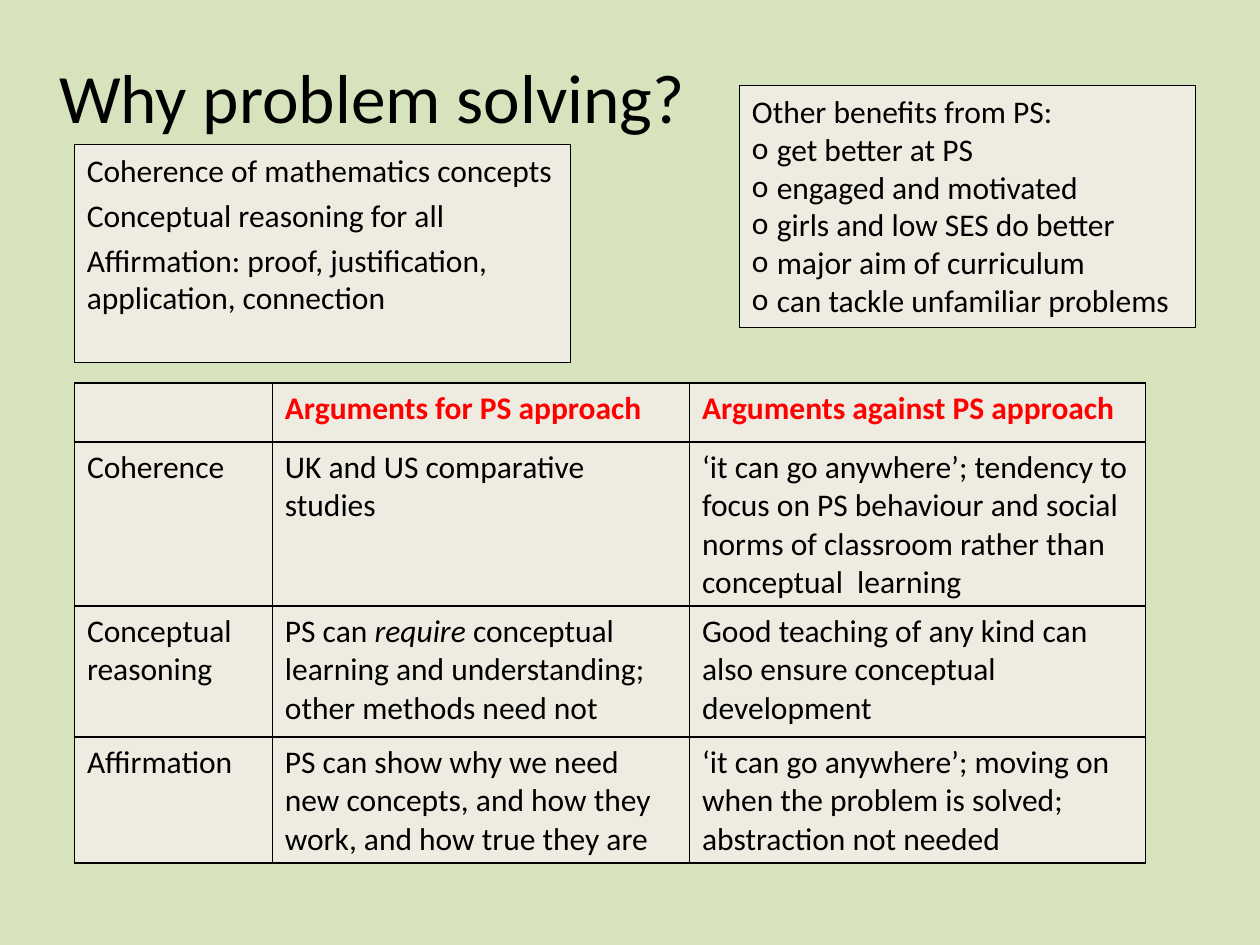
from lxml import etree
from pptx import Presentation
from pptx.dml.color import RGBColor
from pptx.enum import shapes, text
from pptx.oxml.ns import qn
from pptx.util import Cm, Pt

COLOURS = {"page": "D7E3BC", "panel": "EEECE1", "ink": "000000", "heading": "FF0000"}
BODY = {"name": "Calibri", "size": Pt(18), "bold": False, "italic": False}
TITLE = {**BODY, "size": Pt(39.6)}
HEADING = {**BODY, "bold": True}
EMPHASIS = {**BODY, "italic": True}

THEMES = [
    "Coherence of mathematics concepts",
    "Conceptual reasoning for all",
    "Affirmation: proof, justification, application, connection",
]
BENEFITS = [
    "get better at PS",
    "engaged and motivated",
    "girls and low SES do better",
    "major aim of curriculum",
    "can tackle unfamiliar problems",
]
ARGUMENTS = [
    ["", "Arguments for PS approach", "Arguments against PS approach"],
    ["Coherence", "UK and US comparative studies",
     "‘it can go anywhere’; tendency to focus on PS behaviour and social norms "
     "of classroom rather than conceptual  learning"],
    ["Conceptual reasoning",
     "PS can *require* conceptual learning and understanding; other methods need not",
     "Good teaching of any kind can also ensure conceptual development"],
    ["Affirmation",
     "PS can show why we need new concepts, and how they work, and how true they are",
     "‘it can go anywhere’; moving on when the problem is solved; abstraction not needed"],
]
COLUMN_WIDTHS = [3.99, 8.41, 9.19]
ROW_HEIGHTS = [1.19, 3.3, 2.64, 2.54]


def colour(name):
    """Return the named colour."""
    return RGBColor.from_string(COLOURS[name])


def apply(target, values):
    """Set every attribute in a dict of format values."""
    for name, value in values.items():
        setattr(target, name, value)


def write(para, words, font=BODY, ink="ink"):
    """Write words in a paragraph, with starred parts in italics."""
    for index, part in enumerate(words.split("*")):
        if part:
            span = para.add_run()
            span.text = part
            apply(span.font, EMPHASIS if index % 2 else font)
            span.font.color.rgb = colour(ink)


def add_bullet(para, indent):
    """Give a paragraph a hanging letter o as its bullet."""
    props = para._p.get_or_add_pPr()
    props.set("marL", str(indent))
    props.set("indent", str(-indent))
    etree.SubElement(props, qn("a:buFont")).set("typeface", BODY["name"])
    etree.SubElement(props, qn("a:buChar")).set("char", "o")


def add_title(page, box, words):
    """Place the centred title."""
    frame = page.shapes.add_textbox(*box).text_frame
    apply(frame, {"word_wrap": True, "vertical_anchor": text.MSO_ANCHOR.MIDDLE})
    frame.paragraphs[0].alignment = text.PP_ALIGN.CENTER
    write(frame.paragraphs[0], words, TITLE)


def add_panel(page, box, lines, space=0, bullets_from=None):
    """Place an outlined panel of lines, bulleted from a given line on."""
    panel = page.shapes.add_shape(shapes.MSO_SHAPE.RECTANGLE, *box)
    panel.shadow.inherit = False
    panel.fill.solid()
    panel.fill.fore_color.rgb = colour("panel")
    panel.line.color.rgb = colour("ink")
    panel.line.width = Pt(0.75)
    frame = panel.text_frame
    apply(frame, {"word_wrap": True, "vertical_anchor": text.MSO_ANCHOR.TOP})
    for index, line in enumerate(lines):
        para = frame.add_paragraph() if index else frame.paragraphs[0]
        apply(para, {"alignment": text.PP_ALIGN.LEFT, "space_before": Pt(space)})
        if bullets_from is not None and index >= bullets_from:
            add_bullet(para, Cm(0.5))
        write(para, line)


def add_borders(cell):
    """Draw a thin line on each side of a cell."""
    props = cell._tc.get_or_add_tcPr()
    for index, side in enumerate(("a:lnL", "a:lnR", "a:lnT", "a:lnB")):
        line = etree.Element(qn(side), w=str(Pt(1)))
        fill = etree.SubElement(line, qn("a:solidFill"))
        etree.SubElement(fill, qn("a:srgbClr")).set("val", COLOURS["ink"])
        props.insert(index, line)


def add_arguments(page, left, top):
    """Place the table of arguments for and against."""
    size = Cm(sum(COLUMN_WIDTHS)), Cm(sum(ROW_HEIGHTS))
    table = page.shapes.add_table(
        len(ROW_HEIGHTS), len(COLUMN_WIDTHS), left, top, *size).table
    apply(table, {"first_row": False, "horz_banding": False})
    for column, width in zip(table.columns, COLUMN_WIDTHS):
        column.width = Cm(width)
    for index, (row, height, entries) in enumerate(zip(table.rows, ROW_HEIGHTS, ARGUMENTS)):
        row.height = Cm(height)
        font, ink = (BODY, "ink") if index else (HEADING, "heading")
        for cell, words in zip(row.cells, entries):
            cell.fill.solid()
            cell.fill.fore_color.rgb = colour("panel")
            add_borders(cell)
            write(cell.text_frame.paragraphs[0], words, font, ink)


def main():
    """Build the slide and save it."""
    deck = Presentation()
    apply(deck, {"slide_width": Cm(25.4), "slide_height": Cm(19.05)})
    page = deck.slides.add_slide(deck.slide_layouts[6])
    page.background.fill.solid()
    page.background.fill.fore_color.rgb = colour("page")
    margin = Cm(1.5)
    add_title(page, (Cm(0), Cm(0.34), Cm(15), Cm(3.18)), "Why problem solving?")
    add_panel(page, (margin, Cm(2.92), Cm(10), Cm(4.39)), THEMES, space=4)
    add_arguments(page, margin, Cm(7.72))
    add_panel(page, (Cm(14.91), Cm(1.73), Cm(9.19), Cm(4.88)),
              ["Other benefits from PS:", *BENEFITS], bullets_from=1)
    deck.save("out.pptx")


if __name__ == "__main__":
    main()
